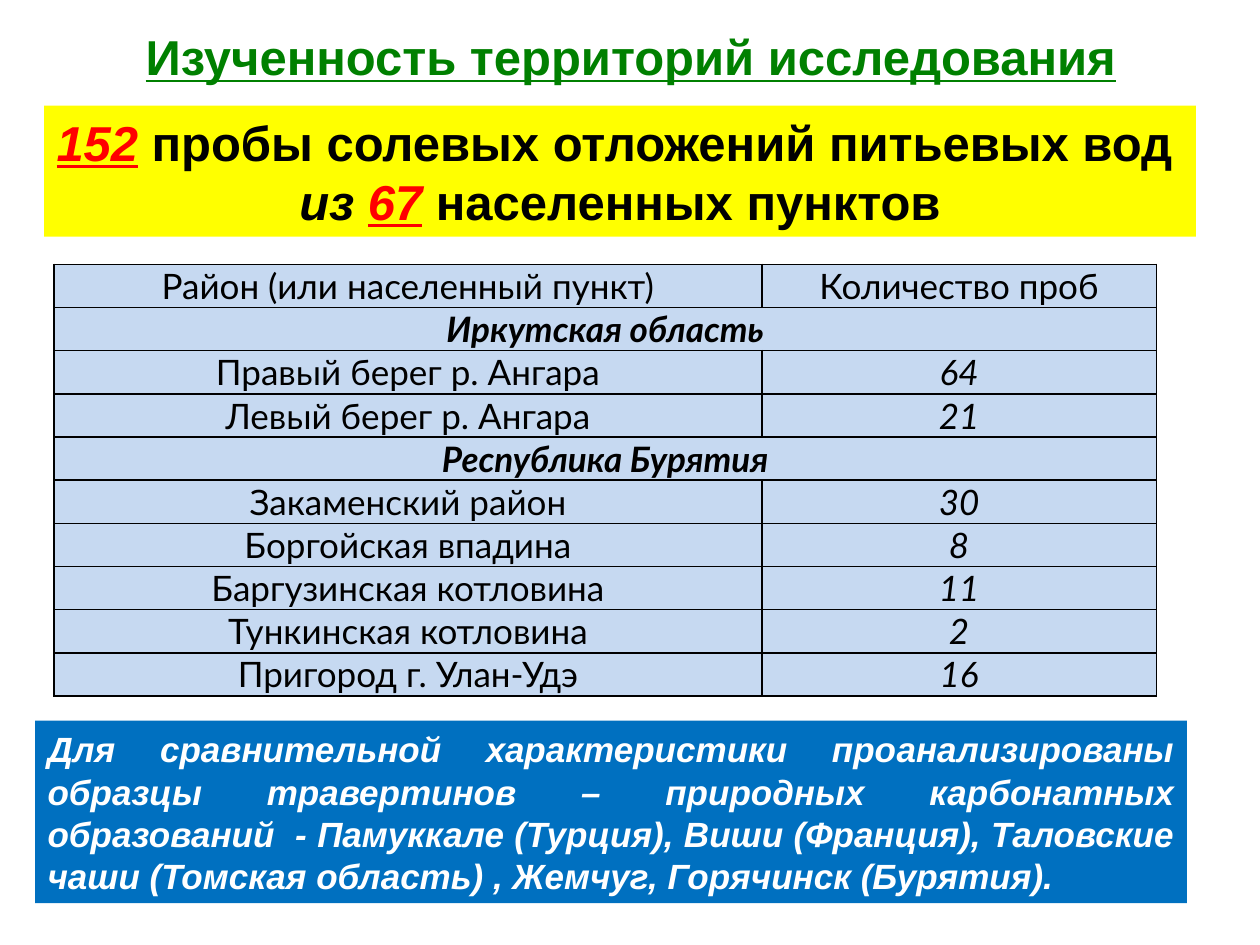
import dataclasses

import pptx
import pptx.dml.color
import pptx.enum.shapes
import pptx.enum.text
import pptx.oxml
import pptx.oxml.ns
import pptx.util

Cm = pptx.util.Cm
ALIGN = pptx.enum.text.PP_ALIGN
MIDDLE = pptx.enum.text.MSO_ANCHOR.MIDDLE


@dataclasses.dataclass(frozen=True)
class Theme:
    green: str = "008000"
    red: str = "FF0000"
    black: str = "000000"
    white: str = "FFFFFF"
    yellow: str = "FFFF00"
    blue: str = "0070C0"
    cell: str = "C6D9F1"
    heading_font: str = "Arial"
    table_font: str = "Lato"
    large: int = 28
    body: int = 20


class SlideBuilder:
    """Draws styled elements on the current slide."""

    def __init__(self, prs, theme):
        self.theme = theme
        self.s = prs.slides.add_slide(prs.slide_layouts[5])

    def run(self, p, text, color, size, font=None, bold=True, italic=False, underline=False):
        r = p.add_run()
        r.text = text
        r.font.name = font or self.theme.heading_font
        r.font.size = pptx.util.Pt(size)
        r.font.bold, r.font.italic, r.font.underline = bold, italic, underline
        r.font.color.rgb = pptx.dml.color.RGBColor.from_string(color)

    def title(self, text, left, top, width, height):
        sp = self.s.shapes.title
        sp.left, sp.top, sp.width, sp.height = map(Cm, (left, top, width, height))
        sp.text_frame.auto_size = pptx.enum.text.MSO_AUTO_SIZE.NONE
        p = sp.text_frame.paragraphs[0]
        p.alignment = ALIGN.CENTER
        self.run(p, text, self.theme.green, self.theme.large, underline=True)

    def panel(self, fill, paragraphs, left, top, width, height):
        sp = self.s.shapes.add_shape(
            pptx.enum.shapes.MSO_SHAPE.RECTANGLE, *map(Cm, (left, top, width, height)))
        sp.shadow.inherit = False
        sp.fill.solid()
        sp.fill.fore_color.rgb = pptx.dml.color.RGBColor.from_string(fill)
        sp.line.fill.background()
        tf = sp.text_frame
        tf.word_wrap = True
        for i, (align, runs) in enumerate(paragraphs):
            p = tf.add_paragraph() if i else tf.paragraphs[0]
            p.alignment = align
            for text, style in runs:
                self.run(p, text, **style)

    def cell(self, cell, text, bold, italic):
        cell.fill.solid()
        cell.fill.fore_color.rgb = pptx.dml.color.RGBColor.from_string(self.theme.cell)
        cell.vertical_anchor = MIDDLE
        cell.margin_left = cell.margin_right = Cm(0.33)
        cell.margin_top = cell.margin_bottom = 0
        p = cell.text_frame.paragraphs[0]
        p.alignment = ALIGN.CENTER
        if text:
            self.run(p, text, self.theme.black, self.theme.body, self.theme.table_font, bold, italic)
        tc_pr = cell._tc.get_or_add_tcPr()
        for i, side in enumerate(("lnL", "lnR", "lnT", "lnB")):
            tc_pr.insert(i, pptx.oxml.parse_xml(
                f'<a:{side} {pptx.oxml.ns.nsdecls("a")} w="12700"><a:solidFill>'
                f'<a:srgbClr val="{self.theme.black}"/></a:solidFill></a:{side}>'))

    def table(self, rows, left, top, col_widths, row_height):
        size = (sum(col_widths), row_height * len(rows))
        table = self.s.shapes.add_table(
            len(rows), len(col_widths), *map(Cm, (left, top, *size))).table
        table.first_row = table.horz_banding = False
        for column, width in zip(table.columns, col_widths):
            column.width = Cm(width)
        for i, (name, count) in enumerate(rows):
            table.rows[i].height = Cm(row_height)
            section = count is None
            if section:
                table.cell(i, 0).merge(table.cell(i, 1))
            self.cell(table.cell(i, 0), name, section, section)
            self.cell(table.cell(i, 1), count, False, i > 0)


def main():
    prs = pptx.Presentation()
    prs.slide_width, prs.slide_height = Cm(25.4), Cm(19.05)
    theme = Theme()
    slide = SlideBuilder(prs, theme)

    plain = {"color": theme.black, "size": theme.large}
    number = {"color": theme.red, "size": theme.large, "italic": True, "underline": True}
    note = {"color": theme.white, "size": theme.body, "italic": True}

    slide.panel(theme.yellow, [
        (ALIGN.JUSTIFY, [("152", number), (" пробы солевых отложений питьевых вод", plain)]),
        (ALIGN.CENTER, [("из ", {**plain, "italic": True}), ("67", number),
                        (" населенных пунктов", plain)]),
    ], 0.89, 2.13, 23.22, 2.64)

    slide.table([
        ("Район (или населенный пункт)", "Количество проб"),
        ("Иркутская область", None),
        ("Правый берег р. Ангара", "64"),
        ("Левый берег р. Ангара", "21"),
        ("Республика Бурятия", None),
        ("Закаменский район", "30"),
        ("Боргойская впадина", "8"),
        ("Баргузинская котловина", "11"),
        ("Тункинская котловина", "2"),
        ("Пригород г. Улан-Удэ", "16"),
    ], 1.09, 5.33, (14.27, 7.95), 0.87)

    slide.title("Изученность территорий исследования", 2.39, 0.41, 20.65, 1.45)

    slide.panel(theme.blue, [(ALIGN.JUSTIFY, [(
        "Для сравнительной характеристики проанализированы образцы травертинов – "
        "природных карбонатных образований  - Памуккале (Турция), Виши (Франция), "
        "Таловские чаши (Томская область) , Жемчуг, Горячинск (Бурятия).", note)])],
        0.71, 14.53, 23.22, 3.68)

    prs.save("out.pptx")


if __name__ == "__main__":
    main()
